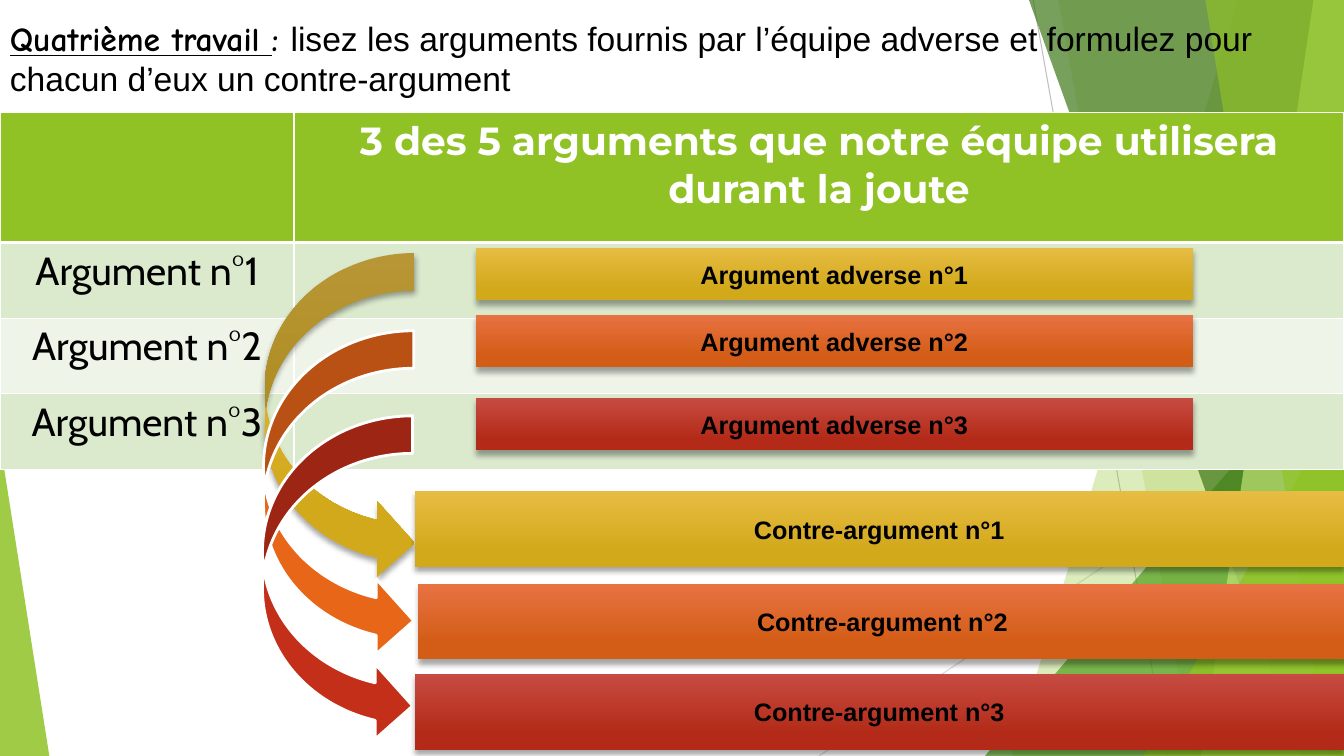
from lxml import etree
from pptx import Presentation
from pptx.dml.color import RGBColor
from pptx.enum.shapes import MSO_CONNECTOR, MSO_SHAPE
from pptx.enum.text import MSO_ANCHOR, MSO_AUTO_SIZE, PP_ALIGN
from pptx.oxml.ns import qn
from pptx.util import Pt

PX = 9525
WIDE, HIGH = 1280, 720
LINE = MSO_CONNECTOR.STRAIGHT
RECT, TRI = MSO_SHAPE.RECTANGLE, MSO_SHAPE.ISOSCELES_TRIANGLE
CURVE = MSO_SHAPE.CURVED_RIGHT_ARROW
CENTER, MIDDLE = PP_ALIGN.CENTER, MSO_ANCHOR.MIDDLE
GROW = MSO_AUTO_SIZE.SHAPE_TO_FIT_TEXT

GOLD, ORANGE, RED = ("E7BC43", "D2A91B"), ("E87242", "D35D16"), ("C74B42", "B32B18")
GREEN, PALE, LIGHT = "90C226", "DBE9CD", "EEF4E8"


def px(*nums):
    return [n * PX for n in nums]


def rgb(code):
    return RGBColor.from_string(code)


def sub(parent, tag, **attrs):
    return etree.SubElement(parent, qn(tag), {k: str(v) for k, v in attrs.items()})


def write(para, text, size=18, font="Arial", color="000000", bold=False,
          under=False, align=None):
    run = para.add_run()
    run.text = text
    run.font.size, run.font.name = Pt(size), font
    run.font.bold, run.font.underline = bold, under
    run.font.color.rgb = rgb(color)
    if align is not None:
        para.alignment = align


def paint(shape, fill, alpha=100, edge=None):
    """Fill with one colour, or with a top-to-bottom gradient for a pair."""
    shape.shadow.inherit = False
    if isinstance(fill, tuple):
        shape.fill.gradient()
        shape.fill.gradient_angle = 270
        for stop, code, pos in zip(shape.fill.gradient_stops, fill, (0, 0.78)):
            stop.color.rgb, stop.position = rgb(code), pos
    else:
        shape.fill.solid()
        shape.fill.fore_color.rgb = rgb(fill)
        if alpha < 100:
            code = shape.element.spPr.find(qn("a:solidFill"))[0]
            sub(code, "a:alpha", val=alpha * 1000)
    if edge:
        shape.line.color.rgb = rgb(edge)
        shape.line.width = Pt(2)
    else:
        shape.line.fill.background()


def shade(shape):
    glow = sub(shape.element.spPr.find(qn("a:effectLst")), "a:outerShdw",
               blurRad=Pt(4), dist=Pt(3), dir=5400000, algn="ctr", rotWithShape=0)
    sub(sub(glow, "a:srgbClr", val="000000"), "a:alpha", val=35000)


def rule(slide, ends, color):
    line = slide.shapes.add_connector(LINE, *px(*ends))
    line.line.color.rgb = rgb(color)
    line.line.width = Pt(0.75)
    sub(line.element.spPr, "a:effectLst")


def blade(slide, top, foot, color, alpha):
    """Panel from a slanted left edge to the right side of the slide."""
    form = slide.shapes.build_freeform(top, 0, scale=PX)
    form.add_line_segments([(WIDE, 0), (WIDE, HIGH), (foot, HIGH)])
    paint(form.convert_to_shape(), color, alpha)


def wedge(slide, left, top, width, peak, color, alpha):
    shape = slide.shapes.add_shape(TRI, *px(left, top, width, HIGH - top))
    shape.adjustments[0] = peak
    paint(shape, color, alpha)


def decor(slide):
    rule(slide, (984, 0, 1112, HIGH), "BFBFBF")
    rule(slide, (WIDE, 387, 780, HIGH), "D9D9D9")
    blade(slide, 1179, 964, GREEN, 30)
    blade(slide, 1008, 1136, GREEN, 20)
    wedge(slide, 938, 320, 342, 1, "54A021", 72)
    blade(slide, 980, 1239, "3F7819", 70)
    blade(slide, 1251, 1144, "C0E474", 70)
    blade(slide, 1148, 1265, GREEN, 65)
    wedge(slide, 1089, 377, 191, 1, GREEN, 80)
    wedge(slide, 0, 421, 47, 0, GREEN, 85)


def title(slide, box):
    frame = slide.shapes.add_textbox(*px(*box)).text_frame
    frame.word_wrap = True
    frame.auto_size = GROW
    para = frame.paragraphs[0]
    write(para, "Quatrième travail ", 24, "Comic Neue", bold=True, under=True)
    write(para, ": ", 24, "Comic Neue", bold=True)
    write(para, "lisez les arguments fournis par l’équipe adverse et formulez "
          "pour chacun d’eux un contre-argument", 24)


def border(cell, widths):
    props = cell._tc.get_or_add_tcPr()
    for side, width in zip("LRTB", widths):
        line = sub(props, f"a:ln{side}", w=Pt(width))
        sub(sub(line, "a:solidFill"), "a:srgbClr", val="FFFFFF")


def grid(slide, left, top, cols, rows):
    table = slide.shapes.add_table(len(rows), len(cols),
                                   *px(left, top, sum(cols), sum(rows))).table
    for col, width in zip(table.columns, cols):
        col.width = width * PX
    for row, height in zip(table.rows, rows):
        row.height = height * PX
    edges = [(1, 1, 1, 3), (1, 1, 3, 1), (1, 1, 1, 1), (1, 1, 1, 1)]
    for row, fill, widths in zip(table.rows, (GREEN, PALE, LIGHT, PALE), edges):
        for cell in row.cells:
            border(cell, widths)
            cell.fill.solid()
            cell.fill.fore_color.rgb = rgb(fill)
    write(table.cell(0, 1).text_frame.paragraphs[0],
          "3 des 5 arguments que notre équipe utilisera durant la joute",
          28, "Montserrat", "FFFFFF", bold=True, align=CENTER)
    for n in range(1, len(rows)):
        write(table.cell(n, 0).text_frame.paragraphs[0], f"Argument n°{n}",
              28, "Cabin", align=CENTER)


def arrows(slide, width, height):
    looks = [(252, 241, GOLD, None), (251, 315, "E76618", "FFFFFF"),
             (250, 396, "C42F1A", "FFFFFF")]
    for left, top, fill, edge in looks:
        arrow = slide.shapes.add_shape(CURVE, *px(left, top, width, height))
        paint(arrow, fill, edge=edge)
        if not edge:
            shade(arrow)


def bars(slide, label, spots, width, height):
    for n, (spot, fill) in enumerate(zip(spots, (GOLD, ORANGE, RED)), 1):
        bar = slide.shapes.add_shape(RECT, *px(*spot, width, height))
        paint(bar, fill)
        shade(bar)
        bar.text_frame.vertical_anchor = MIDDLE
        write(bar.text_frame.paragraphs[0], f"{label} n°{n}", bold=True, align=CENTER)


def main():
    deck = Presentation()
    deck.slide_width, deck.slide_height = px(WIDE, HIGH)
    slide = deck.slides.add_slide(deck.slide_layouts[6])
    decor(slide)
    title(slide, (0, 12, WIDE, 165))
    grid(slide, 0, 107, (280, 1000), (124, 72, 72, 72))
    arrows(slide, 143, 312)
    bars(slide, "Contre-argument", [(395, 468), (398, 556), (395, 642)], 885, 72)
    bars(slide, "Argument adverse", [(453, 236), (453, 300), (453, 379)], 683, 50)
    deck.save("out.pptx")


if __name__ == "__main__":
    main()
